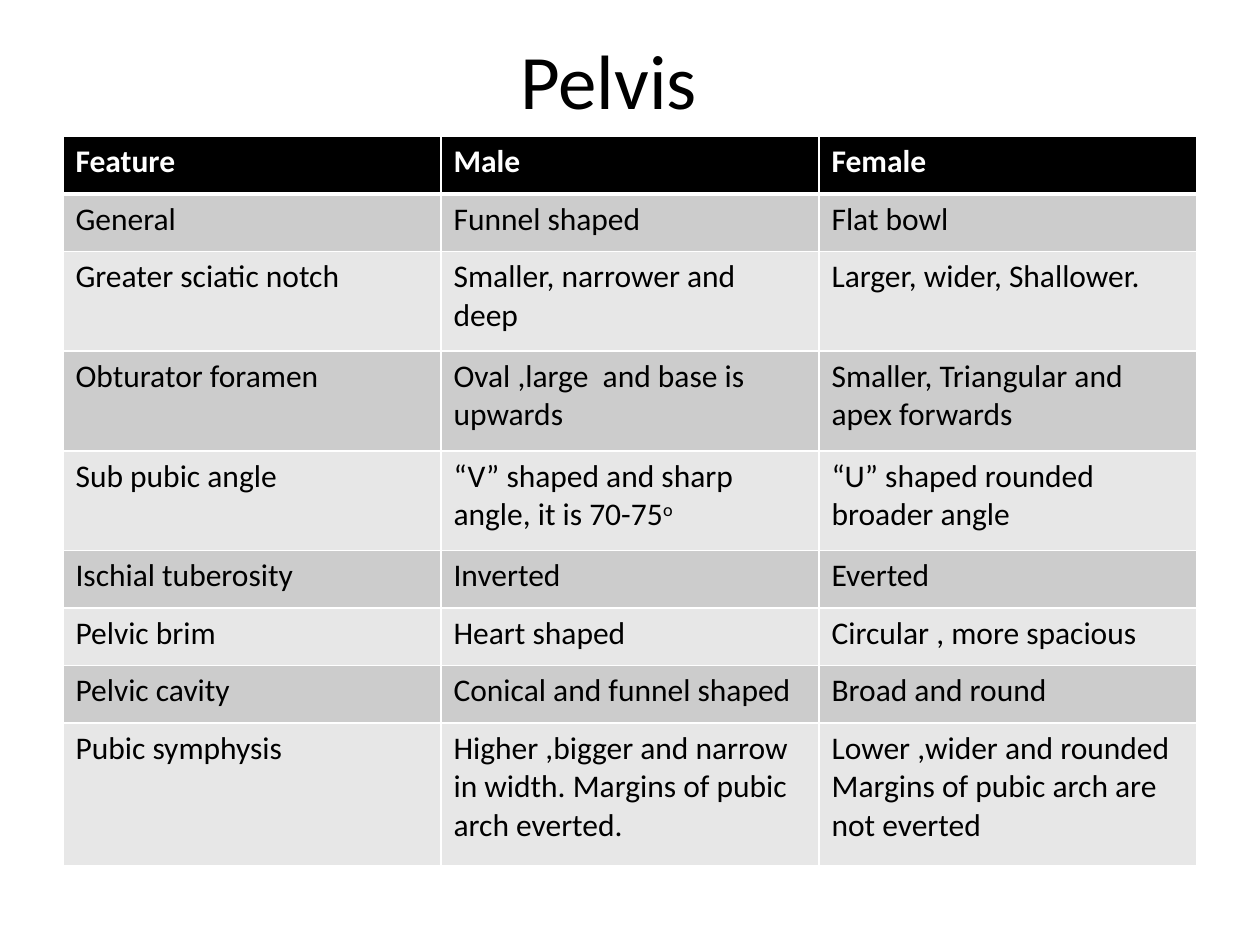
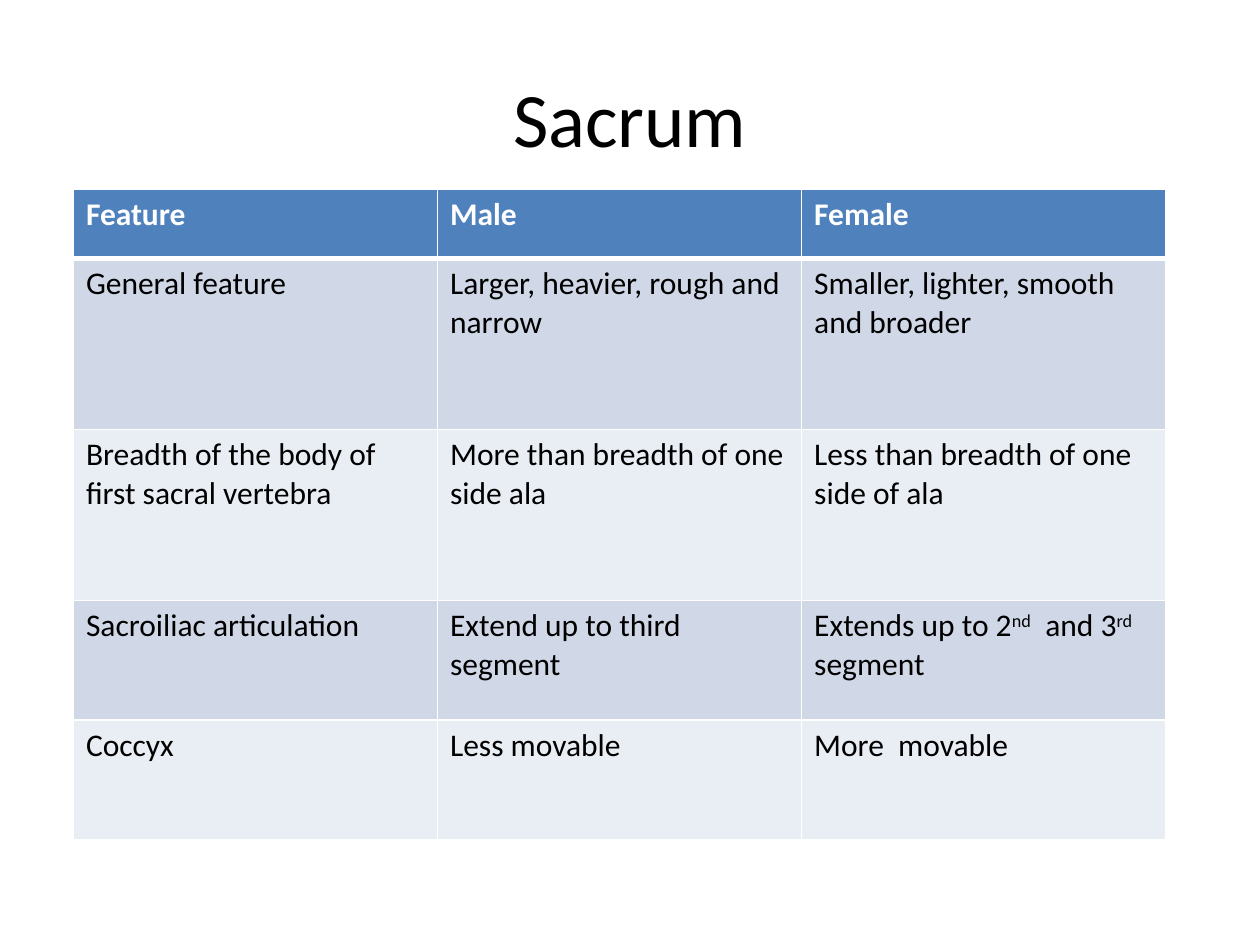
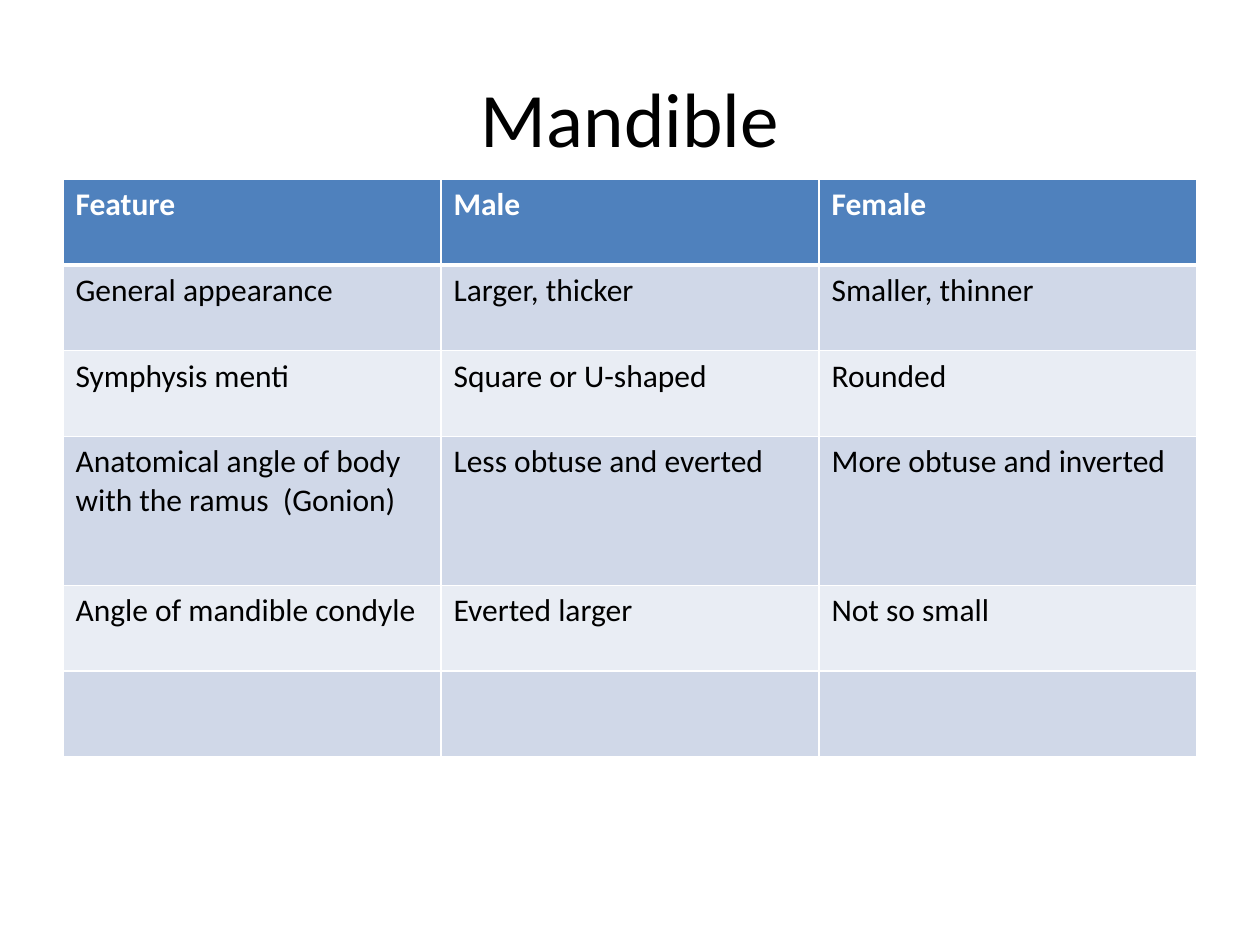
import pptx
import pptx.dml.color
import pptx.enum.text
import pptx.oxml.ns
import pptx.util
from lxml import etree

Cm = pptx.util.Cm
FONT = "Calibri"
BLACK, WHITE = "000000", "FFFFFF"
GREYS = {"header": "000000", "bands": ("CCCCCC", "E7E7E7")}
BLUES = {"header": "4F81BD", "bands": ("D0D8E8", "E9EDF4")}
HEADINGS = ("Feature", "Male", "Female")
THIN, THICK = 1, 3  # cell border widths in points

# Content: lengths in cm, superscripts between ^ marks
BONES = [
    {
        "title": "Pelvis", "title_at": (0.84, 0), "colours": GREYS,
        "table_at": (1.27, 2.75), "width": 22.86,
        "heights": (1.16, 1.16, 2.01, 2.01, 2.01, 1.16, 1.16, 1.16, 2.87),
        "features": [
            ("General", "Funnel shaped", "Flat bowl"),
            ("Greater sciatic notch", "Smaller, narrower and deep",
             "Larger, wider, Shallower."),
            ("Obturator foramen", "Oval ,large  and base is upwards",
             "Smaller, Triangular and apex forwards"),
            ("Sub pubic angle", "“V” shaped and sharp angle, it is 70-75^o^",
             "“U” shaped rounded broader angle"),
            ("Ischial tuberosity", "Inverted", "Everted"),
            ("Pelvic brim", "Heart shaped", "Circular , more spacious"),
            ("Pelvic cavity", "Conical and funnel shaped", "Broad and round"),
            ("Pubic symphysis",
             "Higher ,bigger and narrow in width. Margins of pubic arch everted.",
             "Lower ,wider and rounded Margins of pubic arch are not everted"),
        ],
    },
    {
        "title": "Sacrum", "title_at": (1.27, 0.76), "colours": BLUES,
        "table_at": (1.48, 3.81), "width": 22.02,
        "heights": (1.4, 3.45, 3.45, 2.41, 2.41),
        "features": [
            ("General feature", "Larger, heavier, rough and narrow",
             "Smaller, lighter, smooth and broader"),
            ("Breadth of the body of first sacral vertebra",
             "More than breadth of one side ala",
             "Less than breadth of one side of ala"),
            ("Sacroiliac articulation", "Extend up to third segment",
             "Extends up to 2^nd^  and 3^rd^ segment"),
            ("Coccyx", "Less movable", "More  movable"),
        ],
    },
    {
        "title": "Mandible", "title_at": (1.27, 0.76), "colours": BLUES,
        "table_at": (1.27, 3.61), "width": 22.86,
        "heights": (1.73, 1.73, 1.73, 3, 1.73, 1.73),
        "features": [
            ("General appearance", "Larger, thicker", "Smaller, thinner"),
            ("Symphysis menti", "Square or U-shaped", "Rounded"),
            ("Anatomical angle of body with the ramus  (Gonion)",
             "Less obtuse and everted", "More obtuse and inverted"),
            ("Angle of mandible condyle", "Everted larger", "Not so small"),
            ("", "", ""),
        ],
    },
]


def rgb(colour):
    return pptx.dml.color.RGBColor.from_string(colour)


def write(frame, text, size=18, colour=BLACK, bold=False, align=None):
    paragraph = frame.paragraphs[0]
    paragraph.alignment = align
    for position, part in enumerate(text.split("^")):
        if not part:
            continue
        run = paragraph.add_run()
        run.text = part
        run.font.name = FONT
        run.font.size = pptx.util.Pt(size)
        run.font.bold = bold
        run.font.color.rgb = rgb(colour)
        if position % 2:
            run.font._element.set("baseline", "30000")


def draw_borders(cell, top, bottom):
    properties = cell._tc.get_or_add_tcPr()
    qn = pptx.oxml.ns.qn
    for side, points in (("L", THIN), ("R", THIN), ("T", top), ("B", bottom)):
        border = etree.SubElement(properties, qn(f"a:ln{side}"),
                                  w=str(pptx.util.Pt(points)))
        fill = etree.SubElement(border, qn("a:solidFill"))
        etree.SubElement(fill, qn("a:srgbClr"), val=WHITE)


def add_title(slide, bone):
    title = slide.shapes.title
    title.left, title.top = map(Cm, bone["title_at"])
    title.width, title.height = Cm(22.86), Cm(3.18)
    title.text_frame.vertical_anchor = pptx.enum.text.MSO_ANCHOR.MIDDLE
    write(title.text_frame, bone["title"], size=44,
          align=pptx.enum.text.PP_ALIGN.CENTER)


def add_comparison(slide, bone):
    rows = [HEADINGS] + bone["features"]
    left, top = map(Cm, bone["table_at"])
    comparison = slide.shapes.add_table(
        len(rows), len(HEADINGS), left, top,
        Cm(bone["width"]), Cm(sum(bone["heights"]))).table
    for column in comparison.columns:
        column.width = Cm(bone["width"] / len(HEADINGS))

    for r, texts in enumerate(rows):
        comparison.rows[r].height = Cm(bone["heights"][r])
        heading = r == 0
        colours = bone["colours"]
        fill = colours["header"] if heading else colours["bands"][(r - 1) % 2]
        for c, text in enumerate(texts):
            cell = comparison.cell(r, c)
            # The thick line under the headings belongs to both rows
            draw_borders(cell, top=THICK if r == 1 else THIN,
                         bottom=THICK if heading else THIN)
            cell.fill.solid()
            cell.fill.fore_color.rgb = rgb(fill)
            write(cell.text_frame, text, bold=heading,
                  colour=WHITE if heading else BLACK)


def main():
    deck = pptx.Presentation()
    deck.slide_width, deck.slide_height = Cm(25.4), Cm(19.05)
    title_only = deck.slide_layouts[5]
    for bone in BONES:
        slide = deck.slides.add_slide(title_only)
        add_title(slide, bone)
        add_comparison(slide, bone)
    deck.save("out.pptx")


if __name__ == "__main__":
    main()
